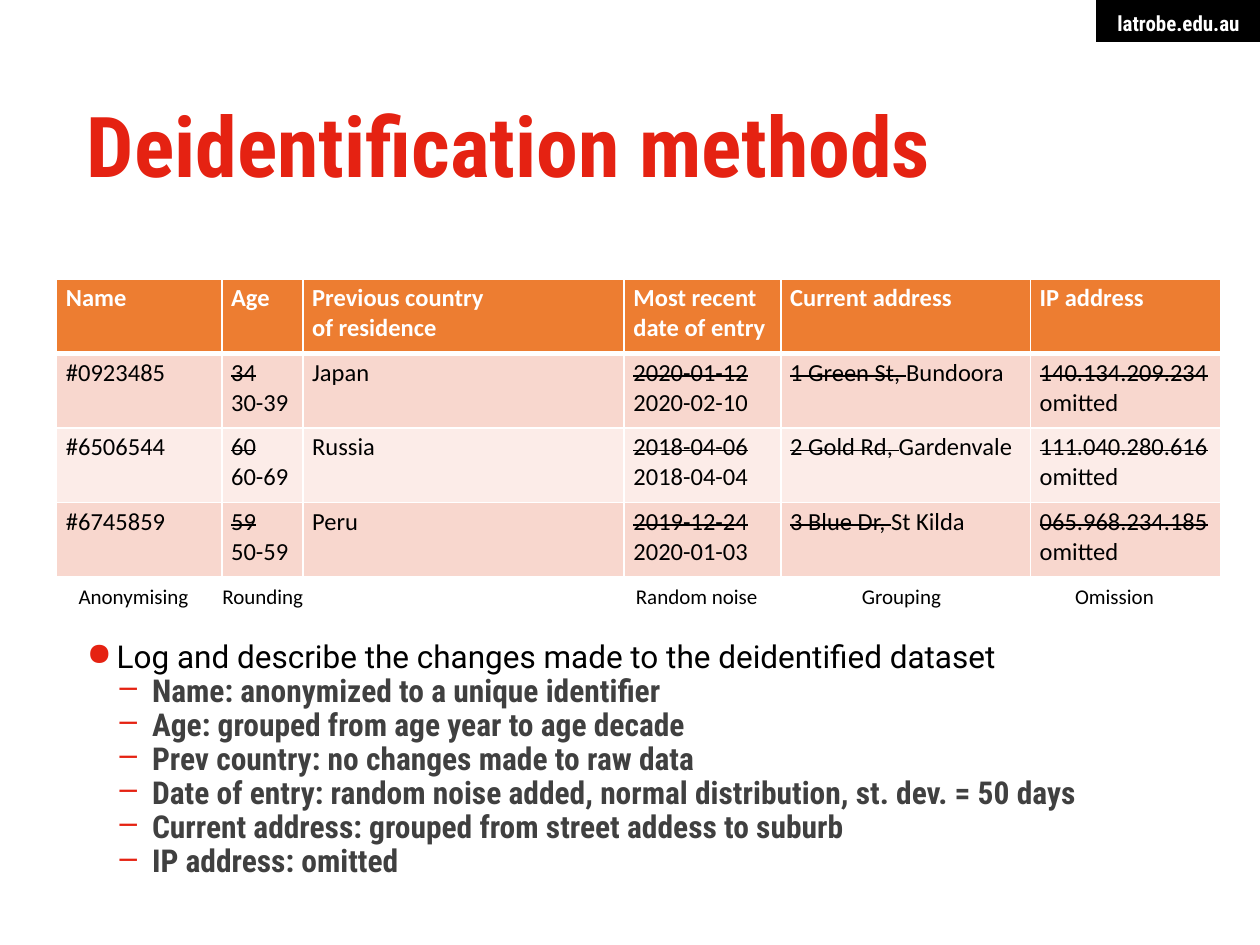
from dataclasses import dataclass

from lxml import etree
from pptx import Presentation
from pptx.dml.color import RGBColor
from pptx.enum import shapes, text
from pptx.oxml import ns
from pptx.util import Pt


@dataclass(frozen=True)
class Theme:
    red: str = "E52212"
    orange: str = "ED7D31"
    bands: tuple = ("F8D7CE", "FCECE8")
    black: str = "000000"
    white: str = "FFFFFF"
    grey: str = "404040"
    plain: str = "Calibri"
    body: str = "Roboto"
    condensed: str = "Roboto Condensed"
    title_size: int = 48
    body_size: int = 18
    table_size: int = 14
    label_size: int = 12


theme = Theme()


def write(frame, content, font=theme.plain, size=theme.label_size,
          color=theme.black, bold=False, align=text.PP_ALIGN.LEFT,
          spacing=None, bullet=None, indent=(0, 0), level=0,
          margins=(0, 0, 0, 0), append=False):
    """Write lines as paragraphs; text between tildes is struck through."""
    frame.word_wrap = True
    (frame.margin_left, frame.margin_top,
     frame.margin_right, frame.margin_bottom) = map(Pt, margins)
    for index, line in enumerate(content.split("\n")):
        first = index == 0 and not append
        paragraph = frame.paragraphs[0] if first else frame.add_paragraph()
        paragraph.alignment = align
        paragraph.level = level
        if spacing:
            paragraph.line_spacing = spacing
        if bullet:
            properties = paragraph._p.get_or_add_pPr()
            left, hanging = indent
            properties.set("marL", str(Pt(left)))
            properties.set("indent", str(Pt(hanging)))
            bullet_color = etree.SubElement(properties, ns.qn("a:buClr"))
            etree.SubElement(bullet_color, ns.qn("a:srgbClr"), val=theme.red)
            etree.SubElement(properties, ns.qn("a:buChar"), char=bullet)
        for part, piece in enumerate(line.split("~")):
            if not piece:
                continue
            run = paragraph.add_run()
            run.text = piece
            run.font.name = font
            run.font.size = Pt(size)
            run.font.bold = bold
            run.font.color.rgb = RGBColor.from_string(color)
            if part % 2:
                run._r.get_or_add_rPr().set("strike", "sngStrike")


def set_borders(cell, **widths):
    """Give a cell white borders of the given widths, ahead of its fill."""
    properties = cell._tc.get_or_add_tcPr()
    for index, side in enumerate(("L", "R", "T", "B")):
        line = etree.Element(ns.qn(f"a:ln{side}"), w=str(Pt(widths.get(side, 1))))
        fill = etree.SubElement(line, ns.qn("a:solidFill"))
        etree.SubElement(fill, ns.qn("a:srgbClr"), val=theme.white)
        properties.insert(index, line)


presentation = Presentation()
presentation.slide_width, presentation.slide_height = Pt(720), Pt(540)
slide = presentation.slides.add_slide(presentation.slide_layouts[6])

# Web address banner
banner = slide.shapes.add_shape(
    shapes.MSO_SHAPE.RECTANGLE, Pt(626.4), Pt(0), Pt(93.6), Pt(24))
banner.shadow.inherit = False
banner.fill.solid()
banner.fill.fore_color.rgb = RGBColor.from_string(theme.black)
banner.line.fill.background()
write(banner.text_frame, "latrobe.edu.au", font=theme.condensed,
      color=theme.white, bold=True, align=text.PP_ALIGN.RIGHT,
      margins=(11.5, 5.5, 11.5, 3.5))
banner.text_frame.word_wrap = False

# Title
title = slide.shapes.add_textbox(Pt(49.7), Pt(56.2), Pt(620.6), Pt(104.4))
write(title.text_frame, "Deidentification methods", font=theme.condensed,
      size=theme.title_size, color=theme.red, bold=True, spacing=Pt(55))

# Data table
rows = [
    ("Name", "Age", "Previous country\nof residence",
     "Most recent\ndate of entry", "Current address", "IP address"),
    ("#0923485", "~34~\n30-39", "Japan", "~2020-01-12~\n2020-02-10",
     "~1 Green St, ~Bundoora", "~140.134.209.234~\nomitted"),
    ("#6506544", "~60~\n60-69", "Russia", "~2018-04-06~\n2018-04-04",
     "~2 Gold Rd, ~Gardenvale", "~111.040.280.616~\nomitted"),
    ("#6745859", "~59~\n50-59", "Peru", "~2019-12-24~\n2020-01-03",
     "~3 Blue Dr, ~St Kilda", "~065.968.234.185~\nomitted"),
]
column_widths = (94.4, 46.3, 183.6, 89.6, 142.6, 108.7)
row_height = 42.6
table = slide.shapes.add_table(
    len(rows), len(column_widths), Pt(32.4), Pt(159.3),
    Pt(sum(column_widths)), Pt(row_height * len(rows))).table
for column, width in zip(table.columns, column_widths):
    column.width = Pt(width)
for row_index, values in enumerate(rows):
    header = row_index == 0
    table.rows[row_index].height = Pt(row_height)
    fill_color = theme.orange if header else theme.bands[(row_index - 1) % 2]
    for column_index, value in enumerate(values):
        cell = table.cell(row_index, column_index)
        cell.fill.solid()
        cell.fill.fore_color.rgb = RGBColor.from_string(fill_color)
        write(cell.text_frame, value, size=theme.table_size, bold=header,
              color=theme.white if header else theme.black)
        cell.margin_left = cell.margin_right = Pt(5.3)
        cell.margin_top = cell.margin_bottom = Pt(2.7)
        set_borders(cell, T=3 if row_index == 1 else 1, B=3 if header else 1)

# Method labels under the columns
labels = [
    ("Anonymising", 36, 80.6),
    ("Rounding", 118.1, 64.1),
    ("Random noise", 353.5, 89.3),
    ("Grouping", 483.1, 64.1),
    ("Omission", 604.8, 64.1),
]
for label, left, width in labels:
    box = slide.shapes.add_textbox(Pt(left), Pt(329.8), Pt(width), Pt(21.6))
    write(box.text_frame, label, align=text.PP_ALIGN.CENTER,
          margins=(7.2, 3.6, 7.2, 3.6))

# Log of changes
changes = """Name: anonymized to a unique identifier
Age: grouped from age year to age decade
Prev country: no changes made to raw data
Date of entry: random noise added, normal distribution, st. dev. = 50 days
Current address: grouped from street addess to suburb
IP address: omitted"""
log = slide.shapes.add_textbox(Pt(49.7), Pt(364.3), Pt(655.9), Pt(182.9))
write(log.text_frame,
      "Log and describe the changes made to the deidentified dataset",
      font=theme.body, size=theme.body_size, bullet="●", indent=(17, -17))
write(log.text_frame, changes, font=theme.condensed, size=theme.body_size,
      color=theme.grey, bold=True, spacing=0.9, bullet="–",
      indent=(37.2, -18.6), level=1, append=True)

presentation.save("out.pptx")
